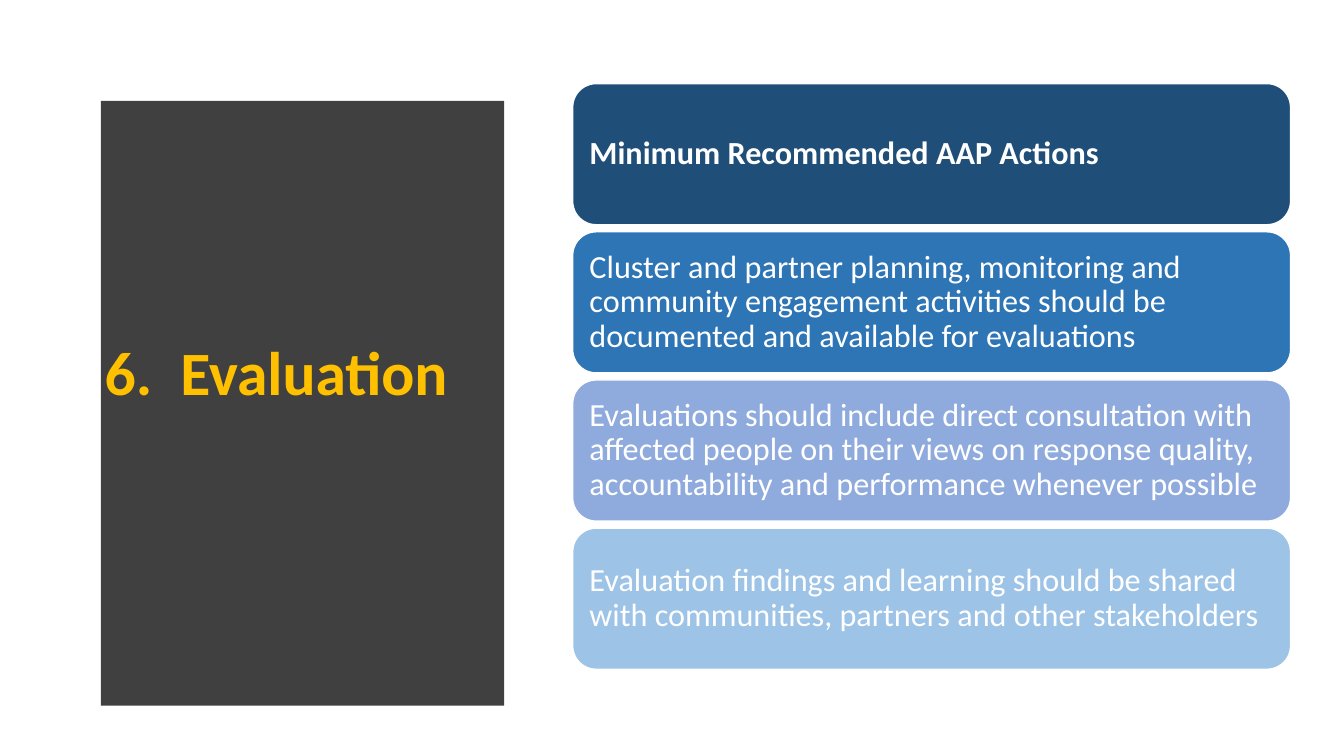
"""Build the Evaluation slide: a curved title panel beside four action cards."""
from lxml import etree
from pptx import Presentation
from pptx import util as u
from pptx.dml.color import RGBColor
from pptx.enum import shapes, text
from pptx.oxml.ns import qn

WHITE = RGBColor(0xFF, 0xFF, 0xFF)
GOLD = RGBColor(0xFF, 0xC0, 0x00)
CHARCOAL = RGBColor(0x40, 0x40, 0x40)
NAVY = RGBColor(0x1F, 0x4E, 0x79)
BLUE = RGBColor(0x2E, 0x75, 0xB6)
PERIWINKLE = RGBColor(0x8F, 0xAA, 0xDC)
SKY = RGBColor(0x9D, 0xC3, 0xE6)

TITLE = "6.\tEvaluation"
CARDS = [
    ("Minimum Recommended AAP Actions", NAVY, True),
    ("Cluster and partner planning, monitoring and community engagement "
     "activities should be documented and available for evaluations", BLUE, False),
    ("Evaluations should include direct consultation with affected people on "
     "their views on response quality, accountability and performance "
     "whenever possible", PERIWINKLE, False),
    ("Evaluation findings and learning should be shared with communities, "
     "partners and other stakeholders", SKY, False),
]

PANEL_LEFT, PANEL_TOP, PANEL_HEIGHT = 0.53, 0.52, 6.44
CURVE_PEAK, CURVE_DEPTH, CURVE_STEPS = 5.32, 0.24, 40
CARD_LEFT, CARD_TOP, CARD_WIDTH, CARD_HEIGHT, CARD_PITCH = 5.68, 0.83, 7.12, 1.4, 1.47
TITLE_TAB = 0.75


def write(sp, content, size=23, color=WHITE, bold=False, tab=None):
    tf = sp.text_frame
    tf.word_wrap = True
    tf.vertical_anchor = text.MSO_ANCHOR.MIDDLE
    tf.margin_left = tf.margin_right = u.Inches(0.1)
    tf.margin_top = tf.margin_bottom = u.Inches(0.1)
    p = tf.paragraphs[0]
    p.alignment = text.PP_ALIGN.LEFT
    p.line_spacing = 0.9
    if tab:
        tabs = etree.SubElement(p._p.get_or_add_pPr(), qn("a:tabLst"))
        etree.SubElement(tabs, qn("a:tab"), pos=str(u.Inches(tab)), algn="l")
    r = p.add_run()
    r.text = content
    r.font.name = "Calibri"
    r.font.size = u.Pt(size)
    r.font.bold = bold
    r.font.color.rgb = color


def paint(sp, color):
    sp.shadow.inherit = False
    sp.fill.solid()
    sp.fill.fore_color.rgb = color


def add_panel(s):
    edge = []
    for i in range(CURVE_STEPS + 1):
        t = i / CURVE_STEPS
        x = CURVE_PEAK - CURVE_DEPTH * (2 * t - 1) ** 2
        edge.append((x, PANEL_TOP + PANEL_HEIGHT * t))
    edge.append((PANEL_LEFT, PANEL_TOP + PANEL_HEIGHT))
    fb = s.shapes.build_freeform(PANEL_LEFT, PANEL_TOP, scale=u.Inches(1))
    fb.add_line_segments(edge, close=True)
    sp = fb.convert_to_shape()
    paint(sp, CHARCOAL)
    sp.line.fill.background()


def add_card(s, row, content, color, bold):
    sp = s.shapes.add_shape(
        shapes.MSO_SHAPE.ROUNDED_RECTANGLE,
        u.Inches(CARD_LEFT), u.Inches(CARD_TOP + row * CARD_PITCH),
        u.Inches(CARD_WIDTH), u.Inches(CARD_HEIGHT))
    paint(sp, color)
    sp.line.color.rgb = WHITE
    sp.line.width = u.Pt(1)
    write(sp, content, bold=bold)


def main():
    prs = Presentation()
    prs.slide_width, prs.slide_height = u.Inches(13.33), u.Inches(7.5)
    s = prs.slides.add_slide(prs.slide_layouts[6])
    add_panel(s)
    title = s.shapes.add_textbox(
        u.Inches(0.94), u.Inches(1.11), u.Inches(3.74), u.Inches(5.24))
    write(title, TITLE, size=44, color=GOLD, bold=True, tab=TITLE_TAB)
    for row, card in enumerate(CARDS):
        add_card(s, row, *card)
    prs.save("out.pptx")


if __name__ == "__main__":
    main()
